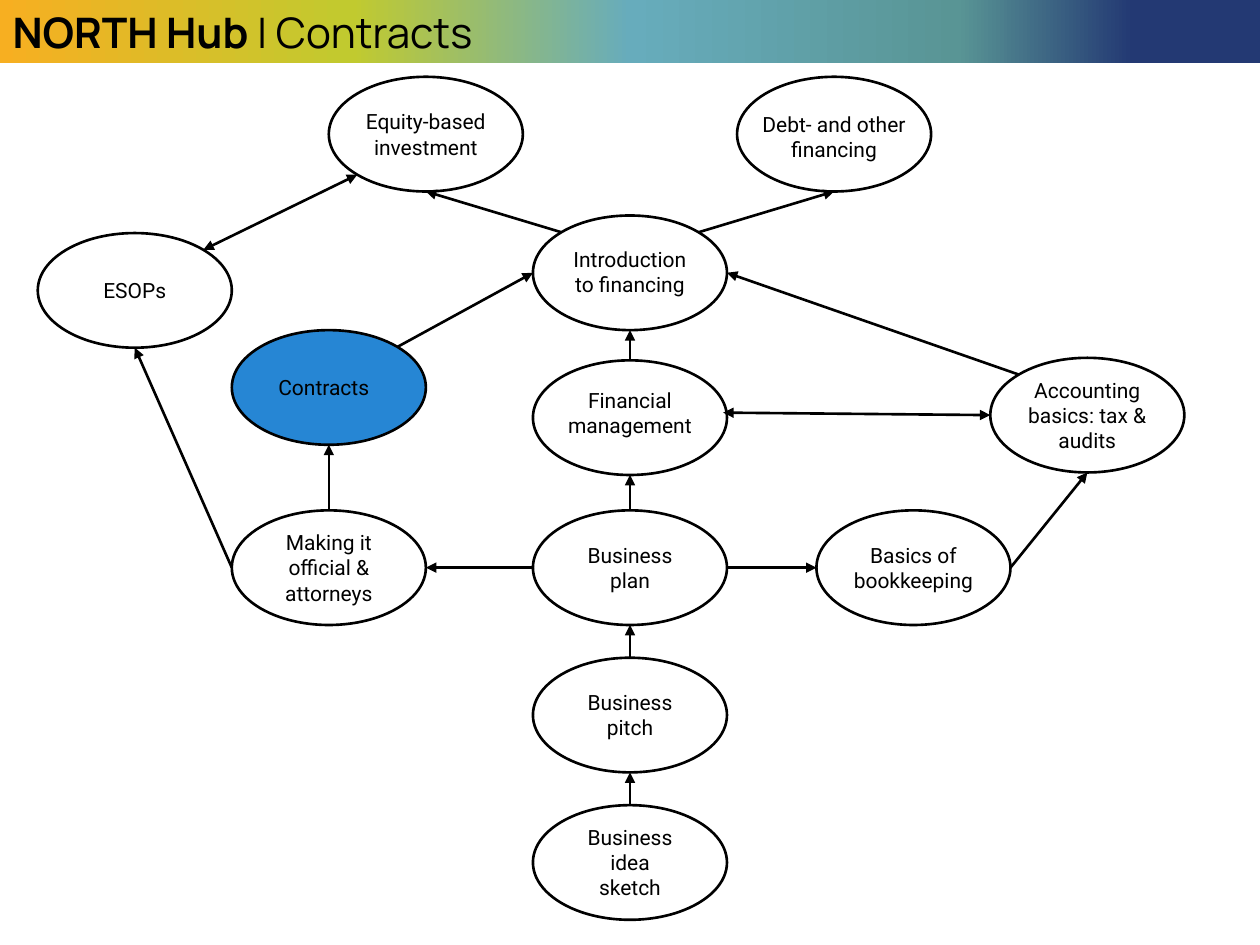
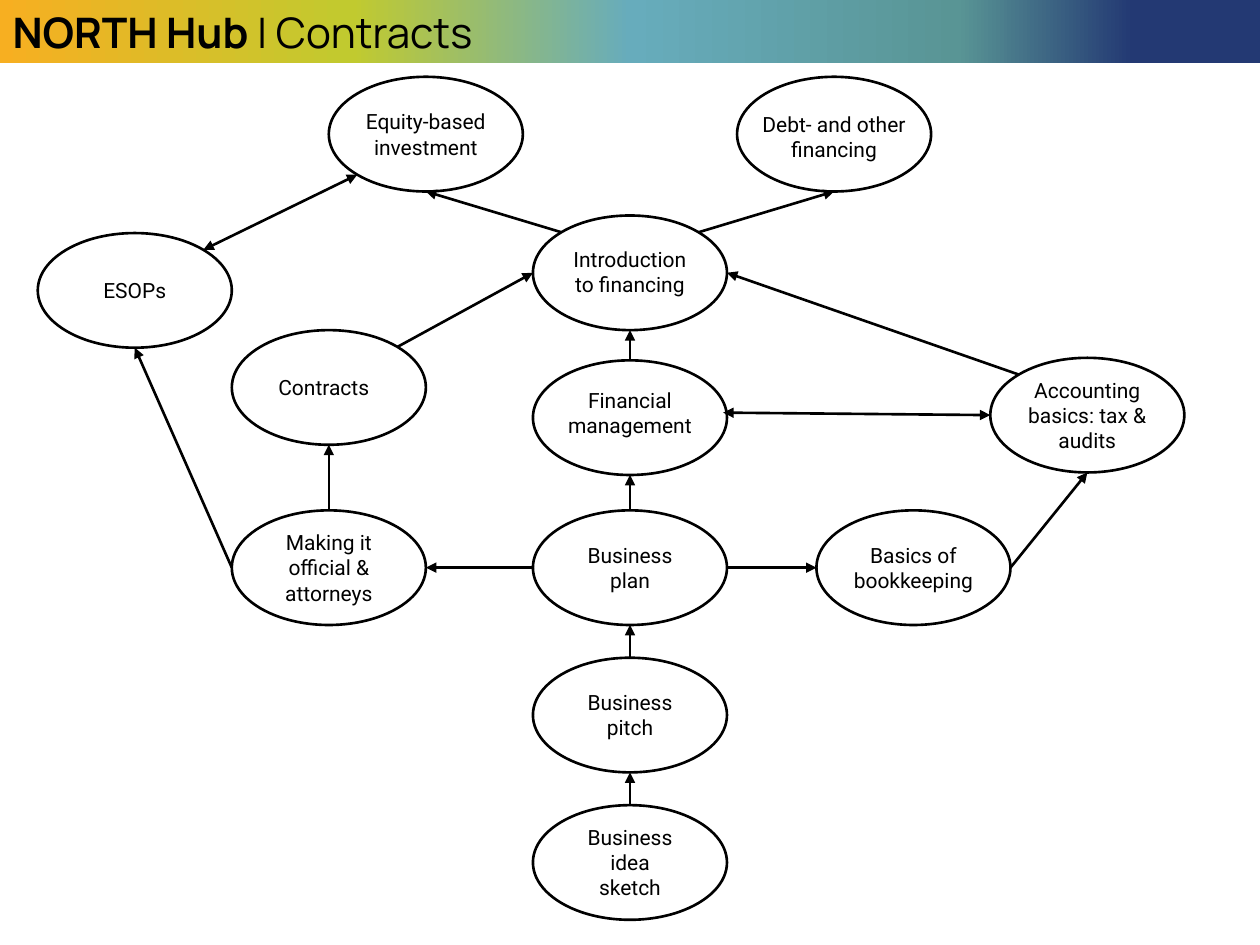
from dataclasses import dataclass
from math import cos, radians, sin

from lxml import etree
from pptx import Presentation
from pptx.dml.color import RGBColor
from pptx.enum.shapes import MSO_CONNECTOR, MSO_SHAPE
from pptx.enum.text import MSO_ANCHOR, MSO_AUTO_SIZE, PP_ALIGN
from pptx.oxml.ns import qn
from pptx.util import Emu, Inches, Pt

OVAL, STRAIGHT = MSO_SHAPE.OVAL, MSO_CONNECTOR.STRAIGHT
LEFT_ALIGNED, CENTERED = PP_ALIGN.LEFT, PP_ALIGN.CENTER
MIDDLE = MSO_ANCHOR.MIDDLE
FIXED_SIZE, GROW = MSO_AUTO_SIZE.NONE, MSO_AUTO_SIZE.SHAPE_TO_FIT_TEXT

SLIDE_WIDTH, SLIDE_HEIGHT = Inches(10), Inches(7.5)
BAND_HEIGHT = Inches(0.5)
OVAL_WIDTH, OVAL_HEIGHT = Inches(1.54), Inches(0.91)
FIRST_LINE, NEXT_LINE = Inches(0.3), Inches(0.2)
TITLE_ONLY = 5

# Connection sites of an oval, counterclockwise from the top in steps of 45 degrees
(TOP, UPPER_LEFT, LEFT, LOWER_LEFT,
 BOTTOM, LOWER_RIGHT, RIGHT, UPPER_RIGHT) = range(8)
BOX_RIGHT = 3


@dataclass(frozen=True)
class Theme:
    ink: str = "000000"
    highlight: str = "2686D4"
    band: tuple = ((0, "F7AF21"), (28, "C1CA2F"), (50, "67ACBC"),
                   (76, "599595"), (90, "233973"))
    title_font: str = "Manrope"
    label_font: str = "Roboto"
    title_size: int = 24
    label_size: int = 12
    line_width: float = 1.5


THEME = Theme()


@dataclass(frozen=True)
class Topic:
    """A topic centred at percentages of the slide's width and height."""
    name: str
    text: str
    column: float
    row: float
    label_width: float
    lines: int = 2
    shift_x: float = 0
    shift_y: float = 0

    @property
    def center(self) -> tuple[int, int]:
        return (int(SLIDE_WIDTH * self.column / 100),
                int(SLIDE_HEIGHT * self.row / 100))

    def site(self, index: int) -> tuple[int, int]:
        x, y = self.center
        angle = radians(90 + 45 * index)
        return (int(x + OVAL_WIDTH / 2 * cos(angle)),
                int(y - OVAL_HEIGHT / 2 * sin(angle)))


@dataclass(frozen=True)
class Link:
    start: str
    start_site: int
    end: str
    end_site: int
    two_way: bool = False
    ends_at_label: bool = False


# Columns and rows of the map, in percent of the slide
FAR_LEFT, MID_LEFT, INNER_LEFT, SPINE = 10.7, 26.1, 33.8, 50
INNER_RIGHT, MID_RIGHT, FAR_RIGHT = 66.2, 72.5, 86.3
FUNDING_ROW, INTRO_ROW, ESOP_ROW = 14.2, 28.87, 30.73
CONTRACT_ROW, AUDIT_ROW, FINANCE_ROW = 41, 43.93, 44.2
PLAN_ROW, SPINE_STEP = 60.07, 15.6

TOPICS = (
    Topic("idea", "Business idea sketch", SPINE, PLAN_ROW + 2 * SPINE_STEP, 0.99, lines=3),
    Topic("pitch", "Business pitch", SPINE, PLAN_ROW + SPINE_STEP, 0.99),
    Topic("plan", "Business plan", SPINE, PLAN_ROW, 0.99),
    Topic("finance", "Financial management", SPINE, FINANCE_ROW, 1.48, shift_y=-0.04),
    Topic("intro", "Introduction to financing", SPINE, INTRO_ROW, 1.27, shift_y=-0.01),
    Topic("bookkeeping", "Basics of bookkeeping", MID_RIGHT, PLAN_ROW, 1.21),
    Topic("official", "Making it official & attorneys", MID_LEFT, PLAN_ROW, 0.99, lines=3),
    Topic("accounting", "Accounting basics: tax & audits", FAR_RIGHT, AUDIT_ROW, 1.27,
          lines=3),
    Topic("contracts", "Contracts", MID_LEFT, CONTRACT_ROW, 1.26, lines=1, shift_x=-0.04),
    Topic("equity", "Equity-based\ninvestment", INNER_LEFT, FUNDING_ROW, 1.4),
    Topic("debt", "Debt- and other financing", INNER_RIGHT, FUNDING_ROW, 1.4, shift_y=0.02),
    Topic("esops", "ESOPs", FAR_LEFT, ESOP_ROW, 1.26, lines=1),
)

LINKS = (
    Link("idea", TOP, "pitch", BOTTOM),
    Link("pitch", TOP, "plan", BOTTOM),
    Link("plan", TOP, "finance", BOTTOM),
    Link("finance", TOP, "intro", BOTTOM),
    Link("intro", UPPER_RIGHT, "debt", BOTTOM),
    Link("intro", UPPER_LEFT, "equity", BOTTOM),
    Link("plan", LEFT, "official", RIGHT),
    Link("plan", RIGHT, "bookkeeping", LEFT),
    Link("bookkeeping", RIGHT, "accounting", BOTTOM),
    Link("official", TOP, "contracts", BOTTOM),
    Link("official", LEFT, "esops", BOTTOM),
    Link("contracts", UPPER_RIGHT, "intro", LEFT),
    Link("accounting", LEFT, "finance", RIGHT, two_way=True, ends_at_label=True),
    Link("accounting", UPPER_LEFT, "intro", RIGHT),
    Link("equity", LOWER_LEFT, "esops", UPPER_RIGHT, two_way=True),
)


def rgb(color: str) -> RGBColor:
    return RGBColor.from_string(color)


def write(para, text: str, *, font: str, size: float, bold: bool = False,
          align=CENTERED) -> None:
    para.alignment = align
    span = para.add_run()
    span.text = text
    span.font.name = font
    span.font.size = Pt(size)
    span.font.bold = bold
    span.font.color.rgb = rgb(THEME.ink)


def fill_gradient(shape, stops: tuple) -> None:
    shape.fill.gradient()
    shape.fill.gradient_angle = 0
    stop_list = next(shape._element.iter(qn("a:gsLst")))
    for old_stop in list(stop_list):
        stop_list.remove(old_stop)
    for percent, color in stops:
        stop = etree.SubElement(stop_list, qn("a:gs"), pos=str(percent * 1000))
        etree.SubElement(stop, qn("a:srgbClr"), val=color)


def draw_title_band(page, brand: str, subject: str) -> None:
    title = page.shapes.title
    title.left, title.top = Emu(0), Emu(0)
    title.width, title.height = SLIDE_WIDTH, BAND_HEIGHT
    fill_gradient(title, THEME.band)
    frame = title.text_frame
    frame.auto_size = FIXED_SIZE
    frame.vertical_anchor = MIDDLE
    for text, bold in ((f"{brand} ", True), (f"| {subject}", False)):
        write(frame.paragraphs[0], text, font=THEME.title_font,
              size=THEME.title_size, bold=bold, align=LEFT_ALIGNED)


def draw_oval(page, topic: Topic, highlighted: bool):
    x, y = topic.center
    oval = page.shapes.add_shape(OVAL, x - OVAL_WIDTH // 2, y - OVAL_HEIGHT // 2,
                                 OVAL_WIDTH, OVAL_HEIGHT)
    oval.shadow.inherit = False
    if highlighted:
        oval.fill.solid()
        oval.fill.fore_color.rgb = rgb(THEME.highlight)
    else:
        oval.fill.background()
    oval.line.color.rgb = rgb(THEME.ink)
    oval.line.width = Pt(THEME.line_width)
    return oval


def draw_label(page, topic: Topic):
    x, y = topic.center
    width = Inches(topic.label_width)
    height = FIRST_LINE + NEXT_LINE * (topic.lines - 1)
    box = page.shapes.add_textbox(x + Inches(topic.shift_x) - width // 2,
                                  y + Inches(topic.shift_y) - height // 2, width, height)
    frame = box.text_frame
    frame.word_wrap = True
    frame.auto_size = GROW
    for index, text in enumerate(topic.text.split("\n")):
        para = frame.add_paragraph() if index else frame.paragraphs[0]
        write(para, text, font=THEME.label_font, size=THEME.label_size)
    return box


def join_oval(connector, end_tag: str, oval, site: int) -> None:
    """Attach a connector's end to one of the oval's eight sites."""
    joints = connector._element.find(".//" + qn("p:cNvCxnSpPr"))
    etree.SubElement(joints, qn(end_tag), id=str(oval.shape_id), idx=str(site))


def draw_link(page, link: Link, topics: dict, ovals: dict, labels: dict) -> None:
    connector = page.shapes.add_connector(
        STRAIGHT, *topics[link.start].site(link.start_site),
        *topics[link.end].site(link.end_site))
    join_oval(connector, "a:stCxn", ovals[link.start], link.start_site)
    if link.ends_at_label:
        connector.end_connect(labels[link.end], BOX_RIGHT)
    else:
        join_oval(connector, "a:endCxn", ovals[link.end], link.end_site)
    connector.line.color.rgb = rgb(THEME.ink)
    connector.line.width = Pt(THEME.line_width)
    properties = connector._element.spPr
    line = properties.find(qn("a:ln"))
    for tag in ("a:headEnd", "a:tailEnd") if link.two_way else ("a:tailEnd",):
        etree.SubElement(line, qn(tag), type="triangle")
    etree.SubElement(properties, qn("a:effectLst"))


def build_map(deck, highlighted: str | None = None) -> None:
    page = deck.slides.add_slide(deck.slide_layouts[TITLE_ONLY])
    draw_title_band(page, "NORTH Hub", "Contracts")
    topics = {topic.name: topic for topic in TOPICS}
    ovals, labels = {}, {}
    for name, topic in topics.items():
        ovals[name] = draw_oval(page, topic, name == highlighted)
        labels[name] = draw_label(page, topic)
    for link in LINKS:
        draw_link(page, link, topics, ovals, labels)


def main() -> None:
    deck = Presentation()
    deck.slide_width, deck.slide_height = SLIDE_WIDTH, SLIDE_HEIGHT
    for highlighted in ("contracts", None):
        build_map(deck, highlighted)
    deck.save("out.pptx")


if __name__ == "__main__":
    main()
